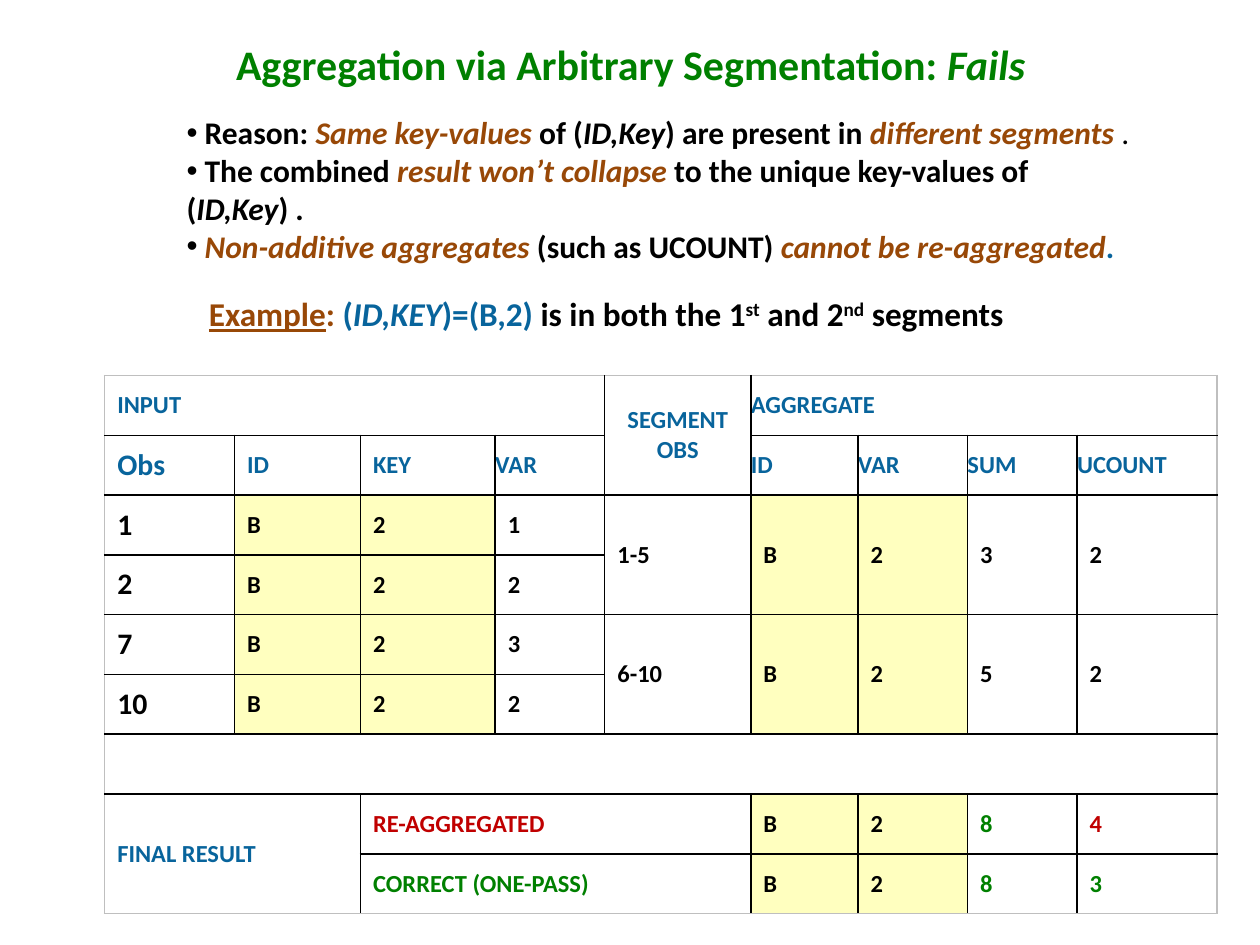
from dataclasses import dataclass
from typing import NamedTuple

from lxml import etree
from pptx import Presentation
from pptx.dml.color import RGBColor
from pptx.enum.text import MSO_ANCHOR, MSO_AUTO_SIZE, PP_ALIGN
from pptx.oxml.ns import qn
from pptx.util import Pt

MIDDLE, TOP = MSO_ANCHOR.MIDDLE, MSO_ANCHOR.TOP
LEFT, CENTER = PP_ALIGN.LEFT, PP_ALIGN.CENTER
NO_AUTOFIT = MSO_AUTO_SIZE.NONE


@dataclass(frozen=True)
class Theme:
    font: str = "Calibri"
    black: str = "000000"
    green: str = "008000"
    blue: str = "08649C"
    brown: str = "984807"
    red: str = "C00000"
    key_fill: str = "FFFF00"
    key_alpha: int = 25
    frame: str = "BFBFBF"
    title: float = 24
    body: float = 18
    example: float = 19
    cell: float = 14
    obs: float = 17


T = Theme()


class Run(NamedTuple):
    text: str
    color: str = T.black
    italic: bool = False
    bold: bool = True
    underline: bool = False
    raised: bool = False


class Box(NamedTuple):
    left: float
    top: float
    width: float
    height: float


@dataclass(frozen=True)
class Cell:
    row: int
    col: int
    text: str
    color: str = T.black
    rows: int = 1
    cols: int = 1
    size: float = T.cell
    key: bool = False
    flush: bool = False
    align: PP_ALIGN = LEFT


TITLE_BOX = Box(49.7, 20.2, 621.4, 32.4)
BODY_BOX = Box(99.4, 61.2, 555.8, 97.2)
EXAMPLE_BOX = Box(112.3, 164.2, 524.2, 30.2)
TABLE_LEFT, TABLE_TOP, ROW_HEIGHT = 59.8, 214.6, 34.16
COL_WIDTHS = [74.2, 72, 77, 62.6, 83.5, 61.2, 62.6, 62.6, 79.9]
ROW_COUNT = 9

TITLE = [
    Run("Aggregation via Arbitrary Segmentation: ", T.green),
    Run("Fails", T.green, italic=True),
]
REASONS = [
    [
        Run(" Reason: "),
        Run("Same key-values ", T.brown, italic=True),
        Run("of ("),
        Run("ID,Key", italic=True),
        Run(") are present in "),
        Run("different segments", T.brown, italic=True),
        Run(" .", bold=False),
    ],
    [
        Run(" The combined "),
        Run("result won’t collapse ", T.brown, italic=True),
        Run("to the unique key-values of ("),
        Run("ID,Key", italic=True),
        Run(") ."),
    ],
    [
        Run(" "),
        Run("Non-additive aggregates", T.brown, italic=True),
        Run(" (such as UCOUNT) "),
        Run("cannot be re-aggregated", T.brown, italic=True),
        Run(".", T.blue),
    ],
]
EXAMPLE = [
    Run("Example", T.brown, underline=True),
    Run(":", T.brown),
    Run(" (", T.blue),
    Run("ID,KEY", T.blue, italic=True),
    Run(")=(B,2) ", T.blue),
    Run("is in both the 1"),
    Run("st", raised=True),
    Run(" and 2"),
    Run("nd", raised=True),
    Run(" segments"),
]


def table_cells() -> list[Cell]:
    cells = [
        Cell(0, 0, "INPUT", T.blue, cols=4),
        Cell(0, 4, "SEGMENT\nOBS", T.blue, rows=2, flush=True, align=CENTER),
        Cell(0, 5, "AGGREGATE", T.blue, cols=4, flush=True),
        Cell(1, 0, "Obs", T.blue, size=T.obs),
        Cell(1, 1, "ID", T.blue),
        Cell(1, 2, "KEY", T.blue),
        Cell(6, 0, "", cols=9),
        Cell(7, 0, "FINAL RESULT", T.blue, rows=2, cols=2),
    ]
    for col, text in [(3, "VAR"), (5, "ID"), (6, "VAR"), (7, "SUM"), (8, "UCOUNT")]:
        cells.append(Cell(1, col, text, T.blue, flush=True))
    for row, (obs, var) in enumerate([("1", "1"), ("2", "2"), ("7", "3"), ("10", "2")], 2):
        cells += [
            Cell(row, 0, obs, size=T.obs),
            Cell(row, 1, "B", key=True),
            Cell(row, 2, "2", key=True),
            Cell(row, 3, var),
        ]
    for row, values in [(2, ("1-5", "B", "2", "3", "2")), (4, ("6-10", "B", "2", "5", "2"))]:
        for col, text in enumerate(values, 4):
            cells.append(Cell(row, col, text, rows=2, key=col in (5, 6)))
    results = [("RE-AGGREGATED", "4", T.red), ("CORRECT (ONE-PASS)", "3", T.green)]
    for row, (label, ucount, color) in enumerate(results, 7):
        cells += [
            Cell(row, 2, label, color, cols=3),
            Cell(row, 5, "B", key=True),
            Cell(row, 6, "2", key=True),
            Cell(row, 7, "8", T.green),
            Cell(row, 8, ucount, color),
        ]
    return cells


def add_run(p, run: Run, size: float) -> None:
    r = p.add_run()
    r.text = run.text
    f = r.font
    f.name, f.size, f.bold, f.italic = T.font, Pt(size), run.bold, run.italic
    f.underline = run.underline
    f.color.rgb = RGBColor.from_string(run.color)
    if run.raised:
        r._r.get_or_add_rPr().set("baseline", "30000")


def fill_text(sp, box: Box, lines: list[list[Run]], size: float, anchor: MSO_ANCHOR = TOP,
              align: PP_ALIGN = LEFT) -> None:
    sp.left, sp.top, sp.width, sp.height = (Pt(v) for v in box)
    tf = sp.text_frame
    tf.word_wrap, tf.auto_size, tf.vertical_anchor = True, NO_AUTOFIT, anchor
    for i, runs in enumerate(lines):
        p = tf.add_paragraph() if i else tf.paragraphs[0]
        p.alignment, p.space_before = align, Pt(0)
        pPr = p._p.get_or_add_pPr()
        pPr.set("marL", "0")
        pPr.set("indent", "0")
        for run in runs:
            add_run(p, run, size)


def set_borders(cell, colors: dict[str, str]) -> None:
    tcPr = cell._tc.get_or_add_tcPr()
    for side, color in colors.items():
        ln = etree.SubElement(tcPr, qn(f"a:ln{side}"), w=str(Pt(1)))
        fill = etree.SubElement(ln, qn("a:solidFill"))
        etree.SubElement(fill, qn("a:srgbClr"), val=color)


def draw_cell(table, c: Cell) -> None:
    bottom, right = c.row + c.rows, c.col + c.cols
    outer = {"L": c.col == 0, "R": right == len(COL_WIDTHS),
             "T": c.row == 0, "B": bottom == ROW_COUNT}
    colors = {side: T.frame if edge else T.black for side, edge in outer.items()}
    for row in range(c.row, bottom):
        for col in range(c.col, right):
            set_borders(table.cell(row, col), colors)
            table.cell(row, col).fill.background()
    cell = table.cell(c.row, c.col)
    if c.rows * c.cols > 1:
        cell.merge(table.cell(bottom - 1, right - 1))
    cell.vertical_anchor = MIDDLE
    cell.margin_left = cell.margin_right = Pt(0 if c.flush else 7.2)
    cell.margin_top = cell.margin_bottom = Pt(0 if c.flush else 5)
    if c.key:
        cell.fill.solid()
        cell.fill.fore_color.rgb = RGBColor.from_string(T.key_fill)
        clr = cell._tc.tcPr.find(qn("a:solidFill")).find(qn("a:srgbClr"))
        etree.SubElement(clr, qn("a:alpha"), val=str(T.key_alpha * 1000))
    p = cell.text_frame.paragraphs[0]
    p.alignment = c.align
    for i, line in enumerate(c.text.split("\n") if c.text else []):
        if i:
            p.add_line_break()
        add_run(p, Run(line, c.color), c.size)


def main() -> None:
    prs = Presentation()
    prs.slide_width, prs.slide_height = Pt(720), Pt(540)
    s = prs.slides.add_slide(prs.slide_layouts[1])
    fill_text(s.shapes.title, TITLE_BOX, [TITLE], T.title, MIDDLE, CENTER)
    table = s.shapes.add_table(
        ROW_COUNT, len(COL_WIDTHS), Pt(TABLE_LEFT), Pt(TABLE_TOP),
        Pt(sum(COL_WIDTHS)), Pt(ROW_HEIGHT * ROW_COUNT)).table
    table.first_row = table.horz_banding = False
    for column, width in zip(table.columns, COL_WIDTHS):
        column.width = Pt(width)
    for row in table.rows:
        row.height = Pt(ROW_HEIGHT)
    for c in table_cells():
        draw_cell(table, c)
    fill_text(s.placeholders[1], BODY_BOX, REASONS, T.body)
    fill_text(s.shapes.add_textbox(0, 0, 0, 0), EXAMPLE_BOX, [EXAMPLE], T.example)
    prs.save("out.pptx")


if __name__ == "__main__":
    main()
